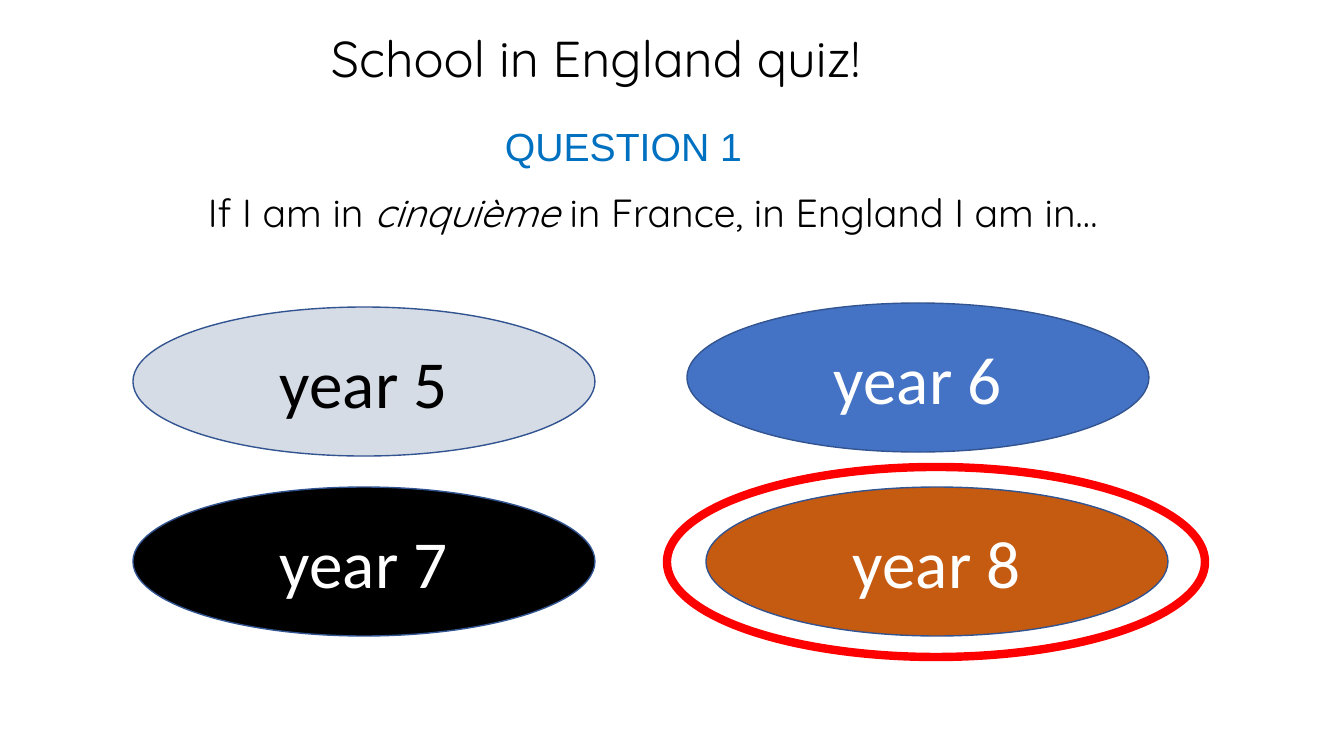
from pptx import Presentation
from pptx.dml.color import RGBColor
from pptx.enum.shapes import MSO_SHAPE
from pptx.enum.text import MSO_ANCHOR, MSO_AUTO_SIZE, PP_ALIGN
from pptx.util import Emu, Pt

COLORS = {
    "black": "000000",
    "white": "FFFFFF",
    "question": "0070C0",
    "pale": "D6DCE5",
    "blue": "4472C4",
    "orange": "C55A11",
    "outline": "325491",
    "ring": "FF0000",
}
PX = 914400 / 100.8


def place(*lengths):
    return [Emu(round(length * PX)) for length in lengths]


def write(paragraph, text, font="Quicksand", size=28, color="black", italic=False):
    span = paragraph.add_run()
    span.text = text
    span.font.name = font
    span.font.size = Pt(size)
    span.font.italic = italic
    span.font.color.rgb = RGBColor.from_string(COLORS[color])


deck = Presentation()
deck.slide_width, deck.slide_height = place(1344, 756)
page = deck.slides.add_slide(deck.slide_layouts[6])

statement = [
    ("If I am in ", {}),
    ("cinquième", {"italic": True}),
    (" in France, in England I am in…", {}),
]
headings = [
    ((321, 22, 869, 72), True, [("School in England quiz!", {"size": 36})]),
    ((495, 117, 340, 57), True, [("QUESTION 1", {"font": "Arial", "color": "question"})]),
    ((198, 183, 980, 57), False, statement),
]
for bounds, wraps, spans in headings:
    box = page.shapes.add_textbox(*place(*bounds))
    box.text_frame.word_wrap = wraps
    box.text_frame.auto_size = MSO_AUTO_SIZE.SHAPE_TO_FIT_TEXT
    for text, style in spans:
        write(box.text_frame.paragraphs[0], text, **style)

answers = [
    ("year 5", 133, 307, "pale", "black"),
    ("year 6", 687, 303, "blue", "white"),
    ("year 7", 133, 487, "black", "white"),
    ("year 8", 706, 487, "orange", "white"),
]
for text, left, top, fill, color in answers:
    answer = page.shapes.add_shape(MSO_SHAPE.OVAL, *place(left, top, 462, 149))
    answer.shadow.inherit = False
    answer.fill.solid()
    answer.fill.fore_color.rgb = RGBColor.from_string(COLORS[fill])
    answer.line.color.rgb = RGBColor.from_string(COLORS["outline"])
    answer.line.width = Pt(1)
    answer.text_frame.word_wrap = True
    answer.text_frame.vertical_anchor = MSO_ANCHOR.MIDDLE
    paragraph = answer.text_frame.paragraphs[0]
    paragraph.alignment = PP_ALIGN.CENTER
    write(paragraph, text, font="Calibri", size=48, color=color)

ring = page.shapes.add_shape(MSO_SHAPE.OVAL, *place(667, 467, 538, 190))
ring.shadow.inherit = False
ring.fill.background()
ring.line.color.rgb = RGBColor.from_string(COLORS["ring"])
ring.line.width = Pt(6)

deck.save("out.pptx")
